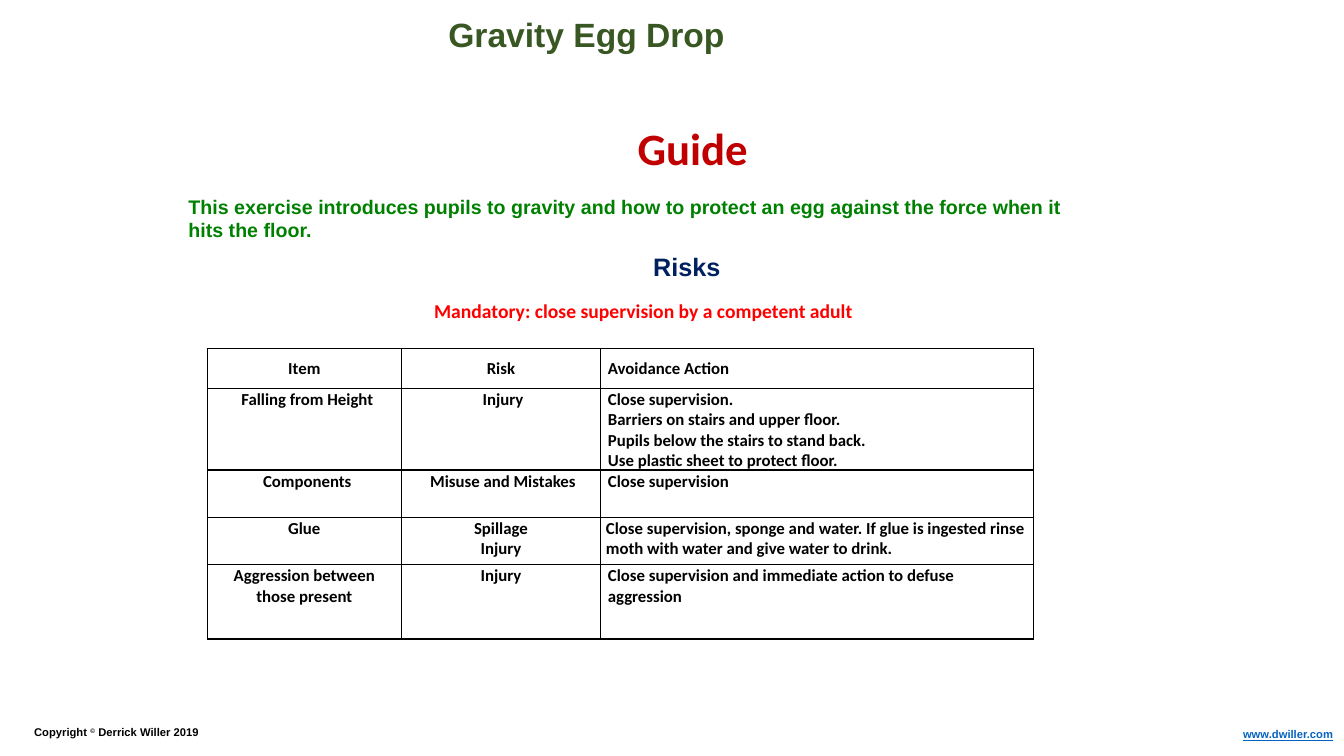
"""Build the Gravity Egg Drop guide slide with its table of risks."""
import pptx
import pptx.dml.color
import pptx.enum.text
import pptx.util
import lxml.etree

Cm = pptx.util.Cm
ALIGN = pptx.enum.text.PP_ALIGN
ANCHOR = pptx.enum.text.MSO_ANCHOR


def style_text(text_frame, size, font_name, color, alignment=ALIGN.LEFT):
    for paragraph in text_frame.paragraphs:
        paragraph.alignment = alignment
        for run in paragraph.runs:
            run.font.size = pptx.util.Pt(size)
            run.font.name = font_name
            run.font.bold = True
            run.font.color.rgb = pptx.dml.color.RGBColor.from_string(color)


def add_text(text, left, top, width, height, size, font_name, color, wrap=False, alignment=ALIGN.LEFT):
    box = slide.shapes.add_textbox(Cm(left), Cm(top), Cm(width), Cm(height))
    text_frame = box.text_frame
    text_frame.word_wrap = wrap
    text_frame.text = text
    style_text(text_frame, size, font_name, color, alignment)
    return text_frame.paragraphs[0]


presentation = pptx.Presentation()
presentation.slide_width = Cm(33.87)
presentation.slide_height = Cm(19.05)
slide = presentation.slides.add_slide(presentation.slide_layouts[6])

add_text("Gravity Egg Drop", 11.05, 0.23, 7.54, 1.27, 24, "Arial", "385723")
add_text("Guide", 15.82, 2.92, 3.73, 1.63, 32, "Calibri", "C00000")
add_text("This exercise introduces pupils to gravity and how to protect an egg "
         "against the force when it hits the floor.",
         4.5, 4.78, 22.63, 2.64, 14, "Arial", "008000", wrap=True)
add_text("Risks", 16.21, 6.22, 2.24, 1.02, 18, "Arial", "002060")
add_text("Mandatory: close supervision by a competent adult",
         10.69, 7.42, 11.13, 0.86, 14, "Calibri", "FF0000")

copyright_line = add_text("Copyright ", 0.61, 18.16, 14.35, 0.61, 8, "Arial", "000000", wrap=True)
symbol = copyright_line.add_run()
symbol.text = "©"
symbol.font._element.set("baseline", "30000")
copyright_line.add_run().text = " Derrick Willer 2019"
for run in copyright_line.runs:
    run.font.size = pptx.util.Pt(8)
    run.font.name = "Arial"
    run.font.bold = True
    run.font.color.rgb = pptx.dml.color.RGBColor.from_string("000000")

website = add_text("www.dwiller.com", 30.45, 18.21, 3.4, 0.61, 8, "Arial", "0563C1",
                   wrap=True, alignment=ALIGN.RIGHT)
website.runs[0].font.underline = True

column_widths = [4.88, 5.03, 10.9]
row_heights = [0.99, 2.06, 1.19, 1.19, 1.88]
side_margins = [0.18, 0.18, 0.18, 0.13, 0.18]
risks = [
    ("Item", "Risk", "Avoidance Action"),
    ("Falling from Height", "Injury",
     "Close supervision.\nBarriers on stairs and upper floor.\n"
     "Pupils below the stairs to stand back.\nUse plastic sheet to protect floor."),
    ("Components", "Misuse and Mistakes", "Close supervision"),
    ("Glue", "Spillage\nInjury",
     "Close supervision, sponge and water. If glue is ingested rinse moth with water "
     "and give water to drink."),
    ("Aggression between those present", "Injury",
     "Close supervision and immediate action to defuse aggression"),
]
risk_table = slide.shapes.add_table(len(risks), len(column_widths), Cm(5.23), Cm(8.79),
                                    Cm(sum(column_widths)), Cm(sum(row_heights))).table
risk_table.first_row = False
risk_table.horz_banding = False
for column, width in zip(risk_table.columns, column_widths):
    column.width = Cm(width)

namespace = "{http://schemas.openxmlformats.org/drawingml/2006/main}"
for row_index, row_texts in enumerate(risks):
    risk_table.rows[row_index].height = Cm(row_heights[row_index])
    for column_index, text in enumerate(row_texts):
        cell = risk_table.cell(row_index, column_index)
        cell.text_frame.text = text
        style_text(cell.text_frame, 12, "Calibri", "000000",
                   ALIGN.LEFT if column_index == 2 else ALIGN.CENTER)
        cell.vertical_anchor = ANCHOR.MIDDLE if row_index == 0 else ANCHOR.TOP
        cell.margin_left = cell.margin_right = Cm(side_margins[row_index])
        if row_index in (1, 2) and column_index < 2:
            cell.margin_left = Cm(0.18 if column_index == 0 else 0.13)
            cell.margin_right = Cm(0.03)
        cell.margin_top = Cm(0.03)
        cell.margin_bottom = 0
        properties = cell._tc.get_or_add_tcPr()
        for side in ("lnL", "lnR", "lnT", "lnB"):
            border = lxml.etree.SubElement(properties, namespace + side, w="12700")
            fill = lxml.etree.SubElement(border, namespace + "solidFill")
            lxml.etree.SubElement(fill, namespace + "srgbClr", val="000000")
        cell.fill.background()

presentation.save("out.pptx")
